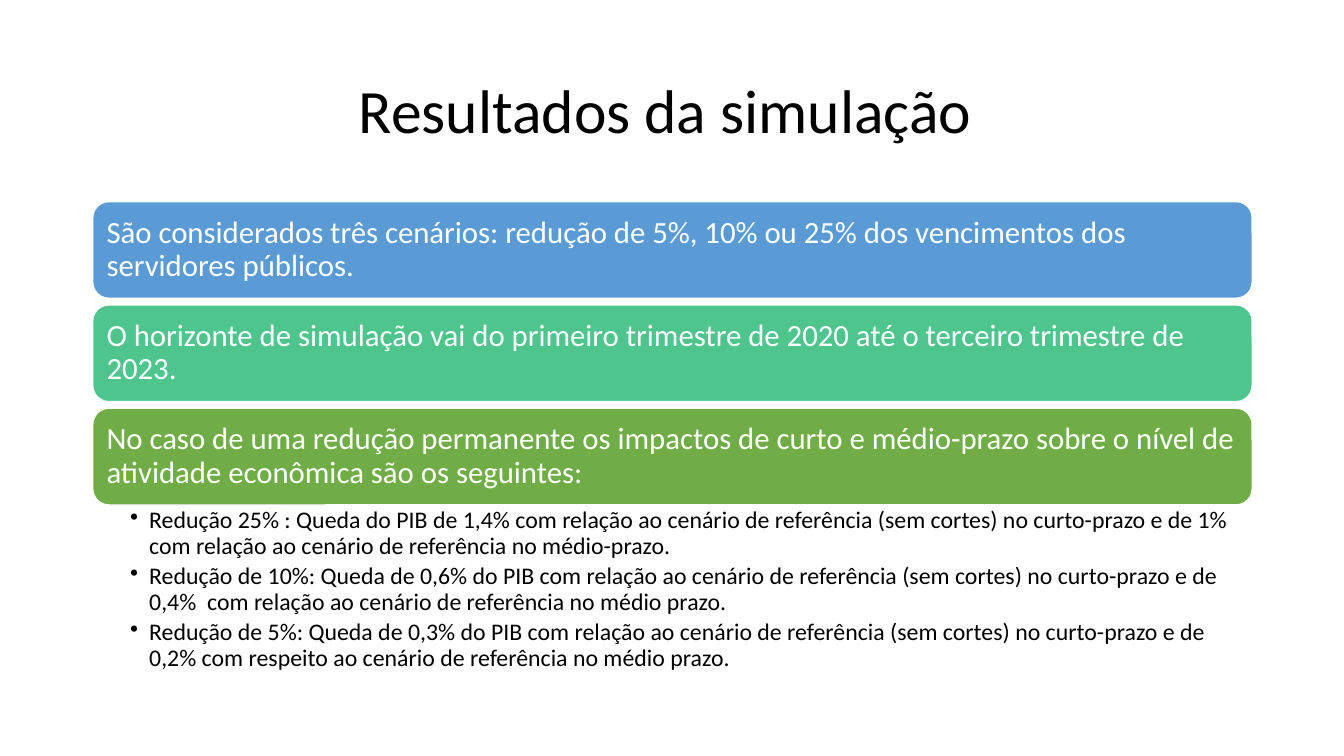
from lxml import etree
from pptx import Presentation
from pptx.dml.color import RGBColor
from pptx.enum import shapes, text
from pptx.oxml.ns import qn
from pptx.util import Inches, Pt

TITLE = "Resultados da simulação "
BARS = [
    ("blue", "São considerados três cenários: redução de 5%, 10% ou 25% dos vencimentos dos servidores públicos."),
    ("teal", "O horizonte de simulação vai do primeiro trimestre de 2020 até o terceiro trimestre de 2023."),
    ("green", "No caso de uma redução permanente os impactos de curto e médio-prazo sobre o nível de atividade econômica são os seguintes:"),
]
IMPACTS = [
    "Redução 25% : Queda do PIB de 1,4% com relação ao cenário de referência (sem cortes) no curto-prazo e de 1% com relação ao cenário de referência no médio-prazo.",
    "Redução de 10%: Queda de 0,6% do PIB com relação ao cenário de referência (sem cortes) no curto-prazo e de 0,4%  com relação ao cenário de referência no médio prazo.",
    "Redução de 5%: Queda de 0,3% do PIB com relação ao cenário de referência (sem cortes) no curto-prazo e de 0,2% com respeito ao cenário de referência no médio prazo.",
]
COLORS = {"blue": "5B9BD5", "teal": "4DC58D", "green": "70AD47",
          "white": "FFFFFF", "black": "000000"}
LEFT, WIDTH = 0.92, 11.5
TOP, HEIGHT, STEP = 2, 0.96, 1.025


def color(name):
    return RGBColor.from_string(COLORS[name])


def write(para, words, size, ink, align=text.PP_ALIGN.LEFT):
    para.alignment = align
    para.line_spacing = 0.9
    run = para.add_run()
    run.text = words
    run.font.name = "Calibri"
    run.font.size = Pt(size)
    run.font.color.rgb = color(ink)


def inset(frame, left, top, right, bottom):
    frame.margin_left, frame.margin_top = Inches(left), Inches(top)
    frame.margin_right, frame.margin_bottom = Inches(right), Inches(bottom)
    frame.word_wrap = True


def bullet(para):
    props = para._p.get_or_add_pPr()
    props.set("marL", str(Inches(0.19)))
    props.set("indent", str(-Inches(0.19)))
    etree.SubElement(props, qn("a:buChar")).set("char", "•")


def main():
    deck = Presentation()
    deck.slide_width, deck.slide_height = Inches(13.33), Inches(7.5)
    slide = deck.slides.add_slide(deck.slide_layouts[5])

    title = slide.shapes.title
    title.left, title.top = Inches(LEFT), Inches(0.4)
    title.width, title.height = Inches(WIDTH), Inches(1.45)
    title.text_frame.vertical_anchor = text.MSO_ANCHOR.MIDDLE
    write(title.text_frame.paragraphs[0], TITLE, 44, "black", text.PP_ALIGN.CENTER)

    for row, (fill, words) in enumerate(BARS):
        bar = slide.shapes.add_shape(
            shapes.MSO_SHAPE.ROUNDED_RECTANGLE, Inches(LEFT),
            Inches(TOP + row * STEP), Inches(WIDTH), Inches(HEIGHT))
        bar.shadow.inherit = False
        bar.fill.solid()
        bar.fill.fore_color.rgb = color(fill)
        bar.line.color.rgb = color("white")
        bar.line.width = Pt(1)
        inset(bar.text_frame, 0.09, 0.09, 0.09, 0.09)
        bar.text_frame.vertical_anchor = text.MSO_ANCHOR.MIDDLE
        write(bar.text_frame.paragraphs[0], words, 22, "white")

    end = TOP + (len(BARS) - 1) * STEP + HEIGHT
    box = slide.shapes.add_textbox(Inches(LEFT), Inches(end), Inches(WIDTH), Inches(1.74))
    frame = box.text_frame
    inset(frame, 0.37, 0.03, 0.17, 0.03)
    for row, words in enumerate(IMPACTS):
        para = frame.add_paragraph() if row else frame.paragraphs[0]
        para.level = 1
        write(para, words, 17, "black")
        para.space_after = Pt(3.4)
        bullet(para)

    deck.save("out.pptx")


if __name__ == "__main__":
    main()
